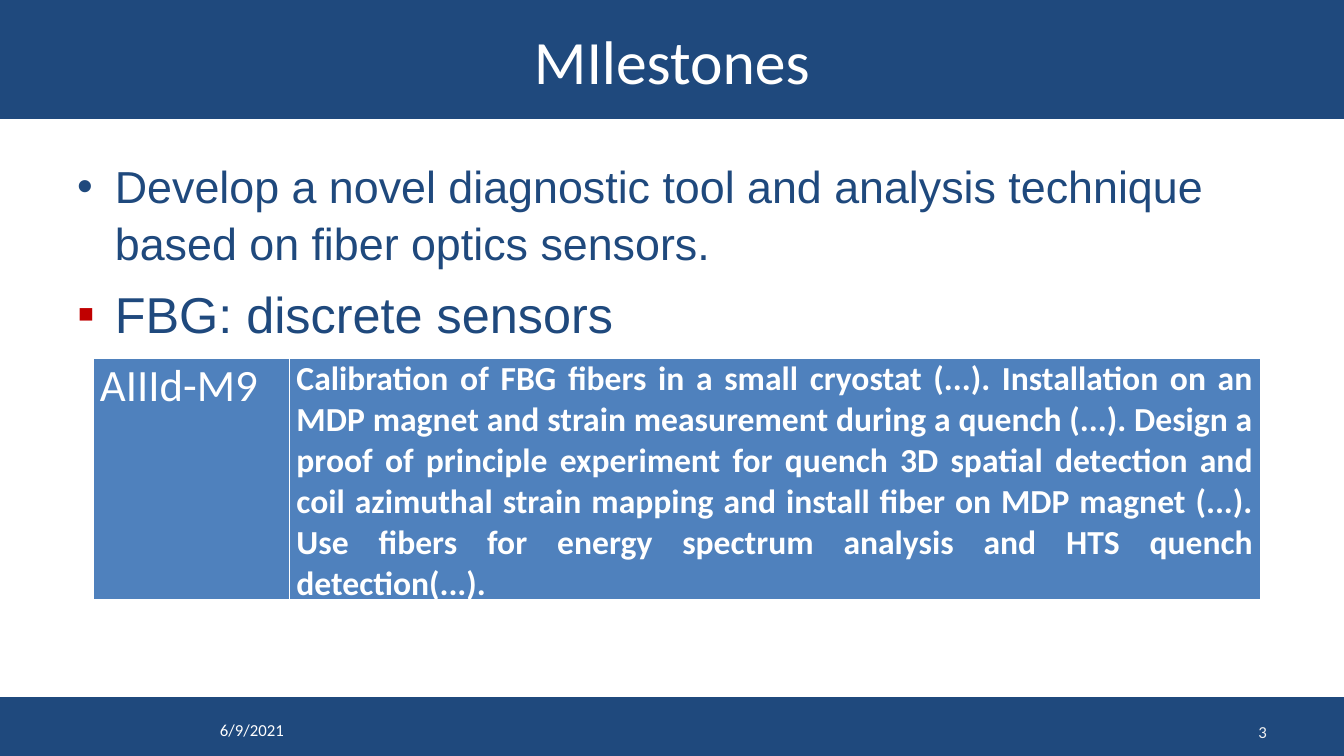
"""Builds the milestones slide on fiber optics sensors."""
from lxml import etree
from pptx import Presentation
from pptx.dml.color import RGBColor
from pptx.enum.shapes import MSO_SHAPE
from pptx.enum.text import MSO_ANCHOR, PP_ALIGN
from pptx.oxml.ns import qn
from pptx.util import Pt

RECT = MSO_SHAPE.RECTANGLE
TOP, MIDDLE = MSO_ANCHOR.TOP, MSO_ANCHOR.MIDDLE
LEFT, CENTER, RIGHT = PP_ALIGN.LEFT, PP_ALIGN.CENTER, PP_ALIGN.RIGHT
JUSTIFY = PP_ALIGN.JUSTIFY

NAVY, BLUE, RED = "1F497D", "4F81BD", "C00000"
WHITE, PALE = "FFFFFF", "F2F2F2"
WIDTH, HEIGHT = 960, 540

BULLETS = [
    ("•", NAVY, 32, "Develop a novel diagnostic tool and analysis technique "
     "based on fiber optics sensors."),
    ("▪", RED, 36, "FBG: discrete sensors"),
]
MILESTONE = [
    ("AIIId-M9", 140.4, {"size": Pt(32), "bold": False}),
    ("Calibration of FBG fibers in a small cryostat (...). Installation on an "
     "MDP magnet and strain measurement during a quench (...). Design a proof "
     "of principle experiment for quench 3D spatial detection and coil "
     "azimuthal strain mapping and install fiber on MDP magnet (...). Use "
     "fibers for energy spectrum analysis and HTS quench detection(...).",
     693.4, {"size": Pt(24), "bold": True}),
]
BORDERS = {"a:lnL": 1, "a:lnR": 1, "a:lnT": 1, "a:lnB": 3}


def rgb(value):
    """Return the colour for a hex string."""
    return RGBColor.from_string(value)


def set_attrs(obj, values):
    """Set each attribute of obj from a dict."""
    for name, value in values.items():
        setattr(obj, name, value)


def write(p, text, color, align=LEFT, **font):
    """Put one formatted run in a paragraph."""
    p.alignment = align
    r = p.add_run()
    r.text = text
    set_attrs(r.font, {"name": "Calibri", **font})
    r.font.color.rgb = rgb(color)


def add_bar(s, top, height):
    """Add a full-width navy bar."""
    sp = s.shapes.add_shape(RECT, 0, Pt(top), Pt(WIDTH), Pt(height))
    sp.shadow.inherit = False
    sp.fill.solid()
    sp.fill.fore_color.rgb = rgb(NAVY)
    sp.line.fill.background()
    return sp


def add_box(s, box, anchor):
    """Add a wrapping text box and return its text frame."""
    tf = s.shapes.add_textbox(*map(Pt, box)).text_frame
    set_attrs(tf, {"word_wrap": True, "vertical_anchor": anchor})
    return tf


def add_bullet(p, char, color):
    """Give a paragraph a hanging coloured bullet."""
    pPr = p._p.get_or_add_pPr()
    pPr.set("marL", str(Pt(27)))
    pPr.set("indent", str(-Pt(27)))
    clr = etree.SubElement(pPr, qn("a:buClr"))
    etree.SubElement(clr, qn("a:srgbClr"), val=color)
    etree.SubElement(pPr, qn("a:buFont"), typeface="Arial")
    etree.SubElement(pPr, qn("a:buChar"), char=char)


def add_bullets(s, items):
    """Add the bulleted list."""
    tf = add_box(s, (48, 108, 864, 145), TOP)
    for i, (char, color, size, text) in enumerate(items):
        p = tf.add_paragraph() if i else tf.paragraphs[0]
        add_bullet(p, char, color)
        set_attrs(p, {"line_spacing": 1.05, "space_before": Pt(8 if i else 0)})
        write(p, text, NAVY, name="Arial", size=Pt(size))


def add_borders(cell):
    """Draw white borders around a table cell."""
    tcPr = cell._tc.get_or_add_tcPr()
    for i, (tag, width) in enumerate(BORDERS.items()):
        ln = etree.Element(qn(tag), w=str(Pt(width)))
        fill = etree.SubElement(ln, qn("a:solidFill"))
        etree.SubElement(fill, qn("a:srgbClr"), val=WHITE)
        tcPr.insert(i, ln)


def add_milestone(s, cells):
    """Add the one-row milestone table."""
    width = sum(w for _, w, _ in cells)
    table = s.shapes.add_table(1, len(cells), Pt(66.4), Pt(256),
                               Pt(width), Pt(173)).table
    for i, (text, w, font) in enumerate(cells):
        table.columns[i].width = Pt(w)
        cell = table.cell(0, i)
        set_attrs(cell, {"margin_left": Pt(5), "margin_right": Pt(5),
                         "margin_top": 0, "margin_bottom": 0})
        cell.fill.solid()
        cell.fill.fore_color.rgb = rgb(BLUE)
        add_borders(cell)
        write(cell.text_frame.paragraphs[0], text, WHITE, JUSTIFY, **font)


def add_footer(s, box, text, color, align):
    """Add a small footer text."""
    tf = add_box(s, box, MIDDLE)
    write(tf.paragraphs[0], text, color, align, size=Pt(12))


def main():
    """Build and save the slide."""
    prs = Presentation()
    set_attrs(prs, {"slide_width": Pt(WIDTH), "slide_height": Pt(HEIGHT)})
    s = prs.slides.add_slide(prs.slide_layouts[6])
    add_bar(s, 498, HEIGHT - 498)
    tf = add_bar(s, 0, 85).text_frame
    tf.vertical_anchor = MIDDLE
    write(tf.paragraphs[0], "MIlestones", WHITE, CENTER, size=Pt(44))
    add_bullets(s, BULLETS)
    add_footer(s, (150, 507, 122, 28.8), "6/9/2021", WHITE, LEFT)
    add_milestone(s, MILESTONE)
    add_footer(s, (688, 508, 224, 28.8), "3", PALE, RIGHT)
    prs.save("out.pptx")


if __name__ == "__main__":
    main()
